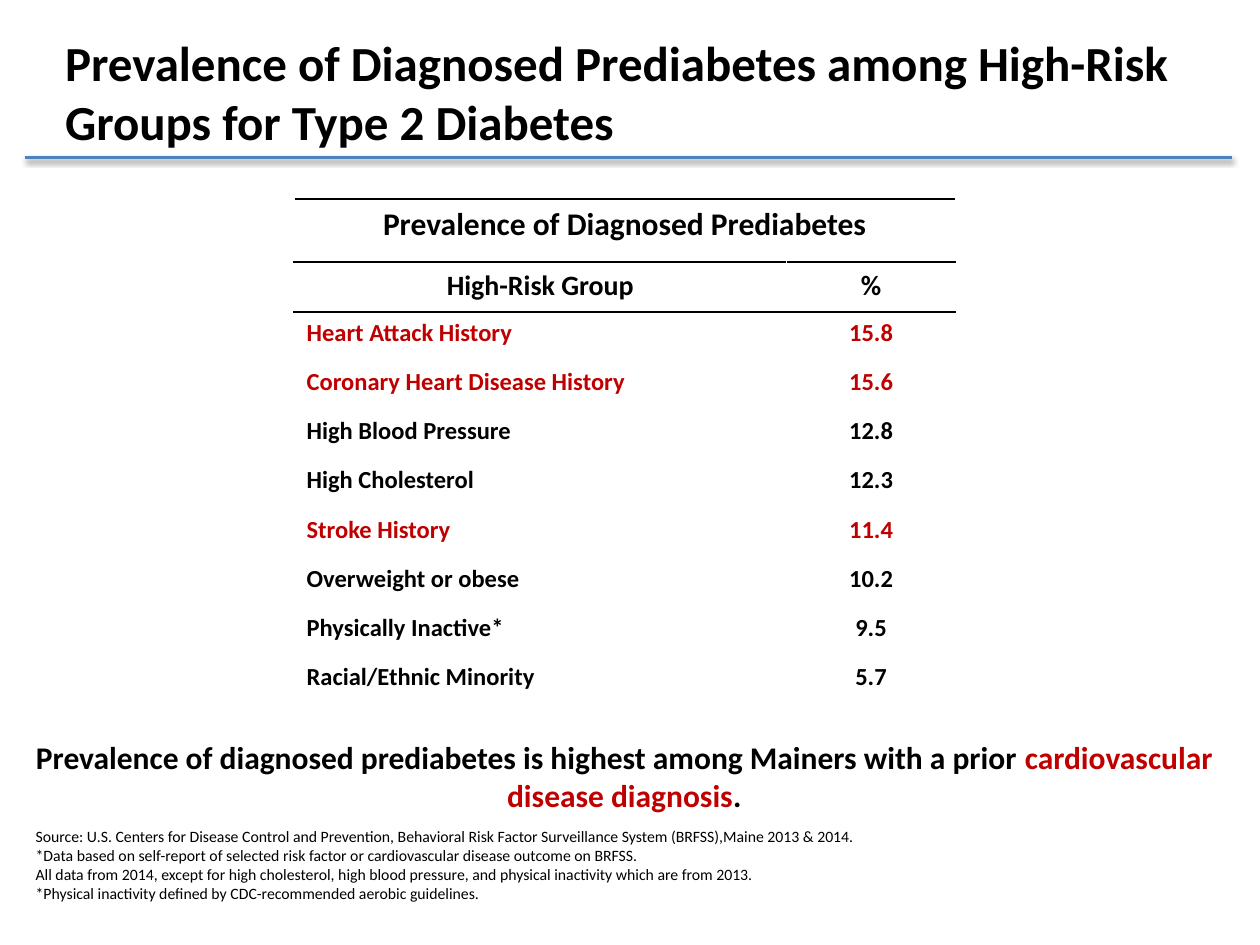
"""Build the slide on diagnosed prediabetes among high-risk groups."""
from lxml import etree
from pptx import Presentation
from pptx.dml.color import RGBColor
from pptx.enum.shapes import MSO_CONNECTOR
from pptx.enum.text import MSO_ANCHOR, PP_ALIGN
from pptx.oxml.ns import qn
from pptx.util import Pt

LEFT, CENTER = PP_ALIGN.LEFT, PP_ALIGN.CENTER
MIDDLE = MSO_ANCHOR.MIDDLE
STRAIGHT = MSO_CONNECTOR.STRAIGHT
BLACK, WHITE, RED, BLUE = "000000", "FFFFFF", "C00000", "4F81BD"
FONT = "Calibri"

TITLE = "Prevalence of Diagnosed Prediabetes among High-Risk Groups for Type 2 Diabetes"
TABLE_TITLE = "Prevalence of Diagnosed Prediabetes"
HEADINGS = ("High-Risk Group", "%")
GROUPS = [
    ("Heart Attack History", "15.8", RED),
    ("Coronary Heart Disease History", "15.6", RED),
    ("High Blood Pressure", "12.8", BLACK),
    ("High Cholesterol", "12.3", BLACK),
    ("Stroke History", "11.4", RED),
    ("Overweight or obese", "10.2", BLACK),
    ("Physically Inactive*", "9.5", BLACK),
    ("Racial/Ethnic Minority", "5.7", BLACK),
]
MESSAGE = [
    ("Prevalence of diagnosed prediabetes is highest among Mainers with a prior ", BLACK),
    ("cardiovascular disease diagnosis", RED),
    (".", BLACK),
]
FOOTNOTES = [
    "Source: U.S. Centers for Disease Control and Prevention, Behavioral Risk Factor "
    "Surveillance System (BRFSS),Maine 2013 & 2014.",
    "*Data based on self-report of selected risk factor or cardiovascular disease outcome on BRFSS.",
    "All data from 2014, except for high cholesterol, high blood pressure, "
    "and physical inactivity which are from 2013.",
    "*Physical inactivity defined by CDC-recommended aerobic guidelines.",
]


def rgb(hex_color):
    """Return a colour from its hex string."""
    return RGBColor.from_string(hex_color)


def format_run(run, size, color=BLACK, bold=True):
    """Set the font of one run."""
    run.font.name = FONT
    run.font.size = Pt(size)
    run.font.bold = bold
    run.font.color.rgb = rgb(color)


def format_text(frame, size, color=BLACK, bold=True, align=LEFT):
    """Format every paragraph and run of a text frame."""
    for paragraph in frame.paragraphs:
        paragraph.alignment = align
        for run in paragraph.runs:
            format_run(run, size, color, bold)


def add_title(slide):
    """Fill and place the title placeholder."""
    title = slide.shapes.title
    title.left, title.top, title.width, title.height = Pt(30), Pt(18), Pt(648), Pt(68.4)
    title.text_frame.text = TITLE
    title.text_frame.vertical_anchor = MIDDLE
    format_text(title.text_frame, 28)


def add_rule(slide):
    """Draw the shadowed line under the title."""
    rule = slide.shapes.add_connector(STRAIGHT, Pt(14.4), Pt(90), Pt(704), Pt(90))
    rule.line.color.rgb = rgb(BLUE)
    rule.line.width = Pt(2)
    effects = etree.SubElement(rule._element.spPr, qn("a:effectLst"))
    shadow = etree.SubElement(effects, qn("a:outerShdw"), blurRad=str(Pt(3.1)),
                              dist=str(Pt(1.6)), dir="5400000", rotWithShape="0")
    tint = etree.SubElement(shadow, qn("a:srgbClr"), val=BLACK)
    etree.SubElement(tint, qn("a:alpha"), val="38000")


def set_borders(cell, top, bottom):
    """Set white sides and the given (colour, width) at top and bottom."""
    side = (WHITE, 1)
    edges = zip(("a:lnL", "a:lnR", "a:lnT", "a:lnB"), (side, side, top, bottom))
    properties = cell._tc.get_or_add_tcPr()
    for position, (tag, (color, width)) in enumerate(edges):
        border = etree.Element(qn(tag), w=str(Pt(width)))
        fill = etree.SubElement(border, qn("a:solidFill"))
        etree.SubElement(fill, qn("a:srgbClr"), val=color)
        properties.insert(position, border)


def fill_cell(cell, text, size, color, align, top, bottom):
    """Write and format one table cell."""
    cell.text_frame.text = text
    format_text(cell.text_frame, size, color, align=align)
    cell.fill.background()
    set_borders(cell, top, bottom)


def add_prevalence_table(slide):
    """Add the table of prevalence by high-risk group."""
    heights = [36, 28.4] + [28.1] * len(GROUPS)
    table = slide.shapes.add_table(len(heights), 2, Pt(168), Pt(113.8),
                                   Pt(378), Pt(sum(heights))).table
    table.first_row = table.horz_banding = False
    for column, width in zip(table.columns, (281.5, 96.5)):
        column.width = Pt(width)
    for row, height in zip(table.rows, heights):
        row.height = Pt(height)

    thick, thin, none = (BLACK, 1.5), (BLACK, 1), (WHITE, 1)
    table.cell(0, 0).merge(table.cell(0, 1))
    for column, text in enumerate((TABLE_TITLE, "")):
        fill_cell(table.cell(0, column), text, 18, BLACK, CENTER, thick, thin)
    for column, heading in enumerate(HEADINGS):
        fill_cell(table.cell(1, column), heading, 16, BLACK, CENTER, thin, thin)
    for row, (group, percent, color) in enumerate(GROUPS, 2):
        top = thin if row == 2 else none
        fill_cell(table.cell(row, 0), group, 14, color, LEFT, top, none)
        fill_cell(table.cell(row, 1), percent, 14, color, CENTER, top, none)


def add_text_frame(slide, left, top, width, height):
    """Add a wrapping text box and return its text frame."""
    frame = slide.shapes.add_textbox(Pt(left), Pt(top), Pt(width), Pt(height)).text_frame
    frame.word_wrap = True
    return frame


def add_message(slide):
    """Add the key message with its highlighted words."""
    paragraph = add_text_frame(slide, 10, 418.3, 693.5, 51).paragraphs[0]
    paragraph.alignment = CENTER
    for words, color in MESSAGE:
        run = paragraph.add_run()
        run.text = words
        format_run(run, 18, color)


def add_footnotes(slide):
    """Add the source and the notes."""
    frame = add_text_frame(slide, 13.3, 469, 556, 58.3)
    frame.text = "\n".join(FOOTNOTES)
    format_text(frame, 9, bold=False)


def main():
    """Build and save the slide."""
    deck = Presentation()
    deck.slide_width, deck.slide_height = Pt(720), Pt(540)
    slide = deck.slides.add_slide(deck.slide_layouts[5])
    add_message(slide)
    add_prevalence_table(slide)
    add_footnotes(slide)
    add_title(slide)
    add_rule(slide)
    deck.save("out.pptx")


if __name__ == "__main__":
    main()
